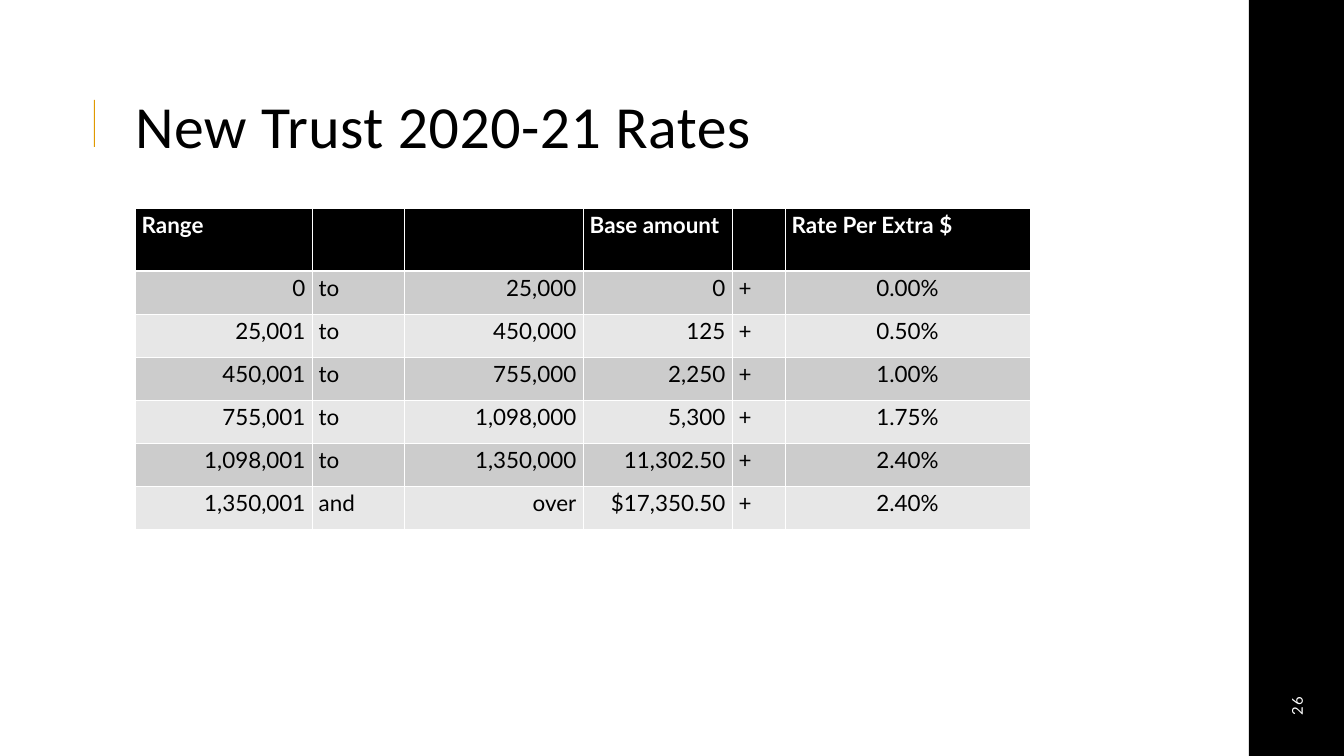
from lxml.etree import SubElement
from pptx import Presentation
from pptx.dml.color import RGBColor
from pptx.enum.shapes import MSO_SHAPE as Shape
from pptx.enum.text import PP_ALIGN as Align
from pptx.oxml.ns import qn
from pptx.util import Pt

SCALE = 914400 / 67.2
BLACK, WHITE, GOLD = "000000", "FFFFFF", "E09900"
BANDS = ["CCCCCC", "E7E7E7"]

WIDTHS = [177, 92, 179, 149, 53, 245]
HEAD_H, ROW_H = 63, 43
ALIGNS = [Align.RIGHT, Align.LEFT, Align.RIGHT, Align.RIGHT, Align.LEFT, Align.CENTER]
HEADS = ["Range", "", "", "Base amount", "", "Rate Per Extra $"]
RATES = [
    ["0", "to", "25,000", "0", "+", "0.00%"],
    ["25,001", "to", "450,000", "125", "+", "0.50%"],
    ["450,001", "to", "755,000", "2,250", "+", "1.00%"],
    ["755,001", "to", "1,098,000", "5,300", "+", "1.75%"],
    ["1,098,001", "to", "1,350,000", "11,302.50", "+", "2.40%"],
    ["1,350,001", "and", "over", "$17,350.50", "+", "2.40%"],
]


def px(n):
    return round(n * SCALE)


def rgb(code):
    return RGBColor.from_string(code)


def paint(fill, color):
    fill.solid()
    fill.fore_color.rgb = rgb(color)


def edge(cell, side, width):
    """Draw a white border on one side (L, R, T or B) of a cell."""
    props = cell._tc.get_or_add_tcPr()
    line = SubElement(props, qn(f"a:ln{side}"), w=str(Pt(width)))
    fill = SubElement(line, qn("a:solidFill"))
    SubElement(fill, qn("a:srgbClr"), val=WHITE)


class Deck:
    def __init__(self, width, height):
        self.show = Presentation()
        self.show.slide_width, self.show.slide_height = px(width), px(height)
        self.slide = self.show.slides.add_slide(self.show.slide_layouts[6])
        self.body, self.title = "Lato", "Calibri"

    def style(self, para, font, size, color, bold=False, track=0):
        """Format the runs of a paragraph; track is in hundredths of a point."""
        for run in para.runs:
            run.font.name, run.font.size = font, Pt(size)
            run.font.bold = bold
            run.font.color.rgb = rgb(color)
            if track:
                run._r.get_or_add_rPr().set("spc", str(track))

    def block(self, x, y, w, h, color):
        box = self.slide.shapes.add_shape(Shape.RECTANGLE, px(x), px(y), px(w), px(h))
        box.shadow.inherit = False
        paint(box.fill, color)
        box.line.fill.background()

    def text(self, x, y, w, h, words, font, size, color, track, lead,
             align=Align.LEFT, turn=0):
        box = self.slide.shapes.add_textbox(px(x), px(y), px(w), px(h))
        box.rotation = turn
        frame = box.text_frame
        frame.word_wrap = True
        frame.margin_left = frame.margin_right = 0
        frame.margin_top = frame.margin_bottom = 0
        frame.text = words
        para = frame.paragraphs[0]
        para.alignment, para.line_spacing = align, Pt(lead)
        self.style(para, font, size, color, track=track)

    def cell(self, cell, words, row, align):
        head = row == 0
        widths = {"L": 1, "R": 1, "T": 3 if row == 1 else 1, "B": 3 if head else 1}
        for side, width in widths.items():
            edge(cell, side, width)
        paint(cell.fill, BLACK if head else BANDS[(row - 1) % 2])
        cell.text = words
        para = cell.text_frame.paragraphs[0]
        para.alignment = Align.LEFT if head else align
        self.style(para, self.body, 24, WHITE if head else BLACK, bold=head)

    def table(self, x, y, rows):
        high = HEAD_H + ROW_H * (len(rows) - 1)
        grid = self.slide.shapes.add_table(
            len(rows), len(WIDTHS), px(x), px(y), px(sum(WIDTHS)), px(high)).table
        for col, width in zip(grid.columns, WIDTHS):
            col.width = px(width)
        for r, row in enumerate(rows):
            grid.rows[r].height = px(ROW_H if r else HEAD_H)
            for c, words in enumerate(row):
                self.cell(grid.cell(r, c), words, r, ALIGNS[c])


def main():
    deck = Deck(1344, 756)
    deck.block(1249, 0, 95, 756, BLACK)
    deck.block(94, 100, 1, 47, GOLD)
    deck.text(1245, 696, 100, 20, "26", deck.body, 16, WHITE, 130, 22.4,
              Align.CENTER, 270)
    deck.text(135, 85, 896, 77, "New Trust 2020-21 Rates", deck.title, 64, BLACK,
              60, 80.6)
    deck.table(135, 208, [HEADS] + RATES)
    deck.show.save("out.pptx")


if __name__ == "__main__":
    main()
